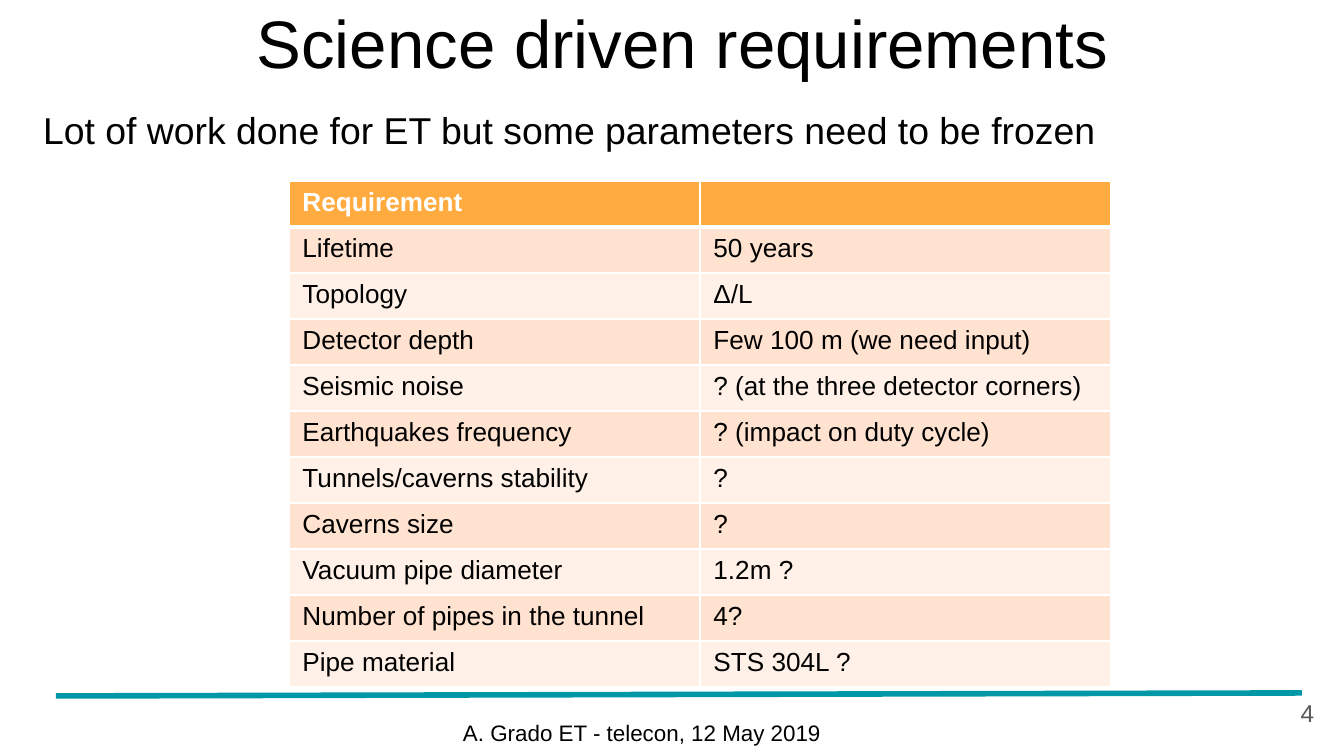
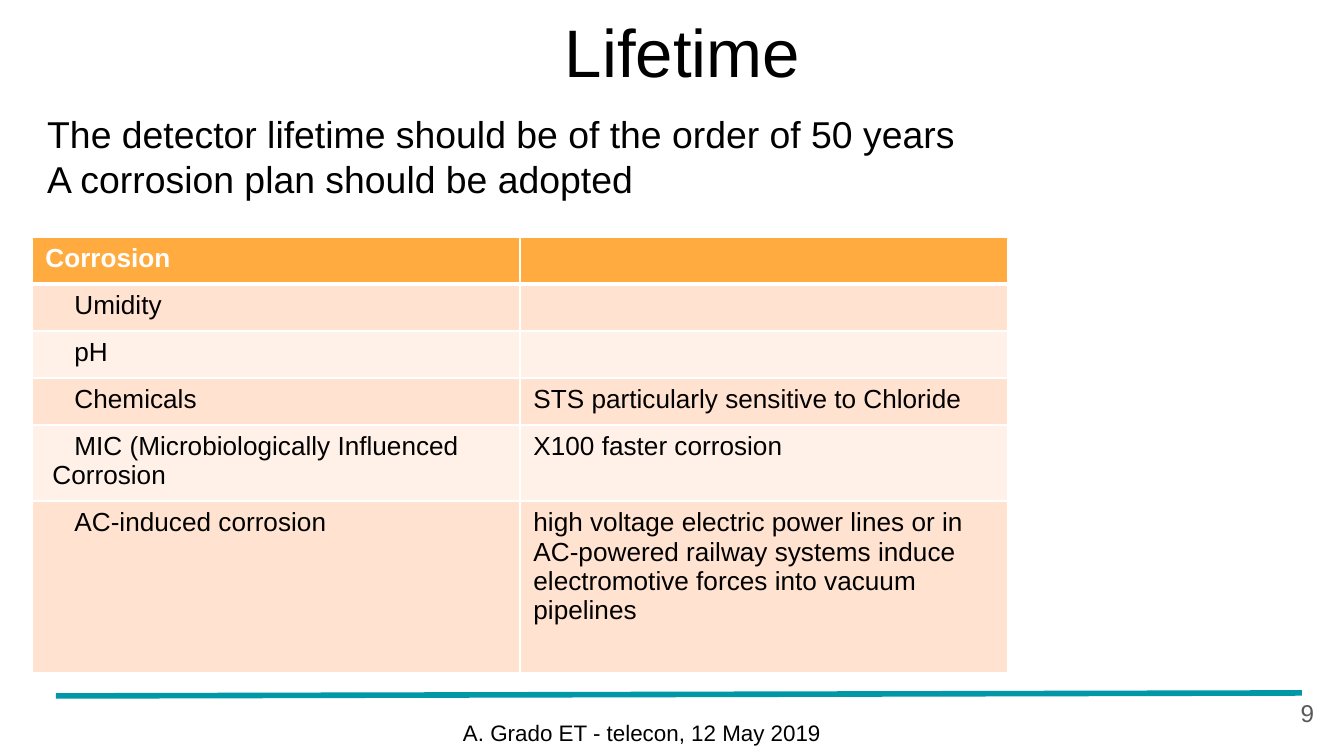
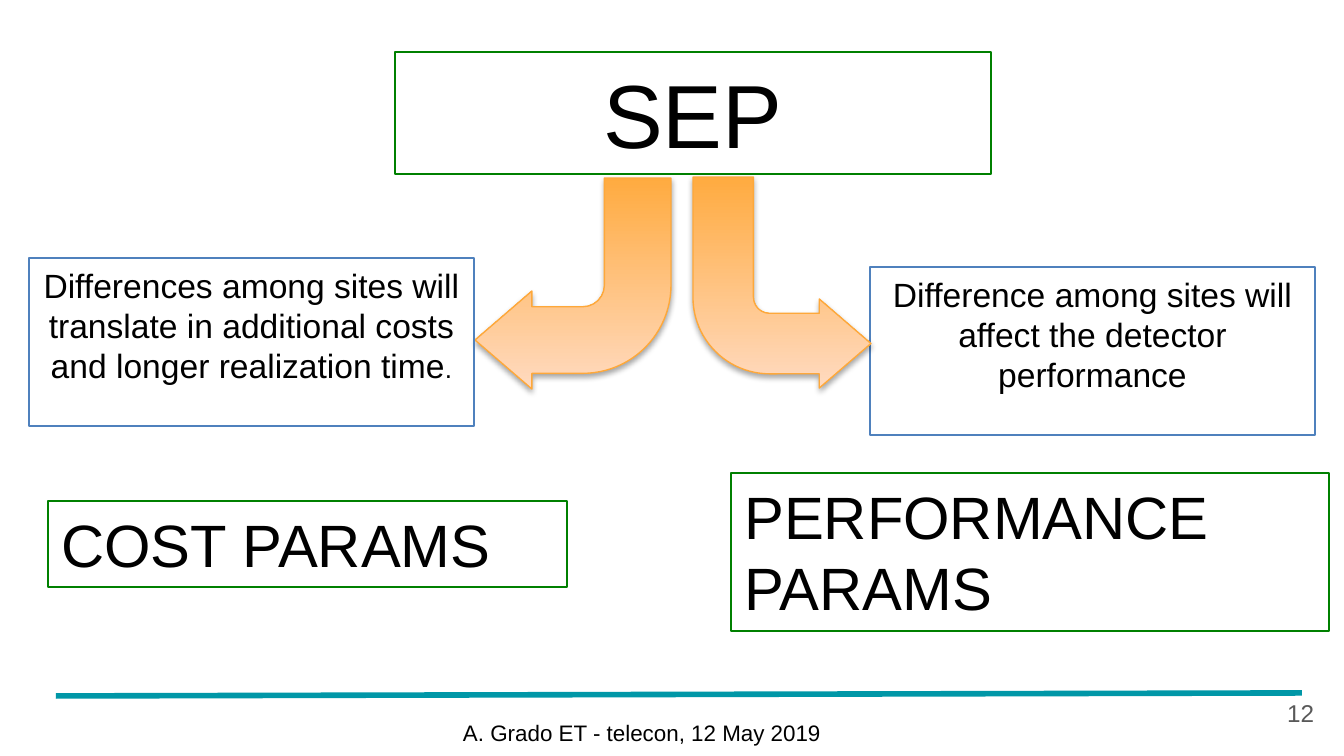
from dataclasses import dataclass

from lxml.etree import SubElement
from pptx import Presentation
from pptx.dml.color import RGBColor as Rgb
from pptx.enum.shapes import MSO_CONNECTOR as Conn, MSO_SHAPE as Kind
from pptx.enum.text import MSO_ANCHOR as Anchor, PP_ALIGN as Align
from pptx.oxml.ns import qn
from pptx.util import Emu, Pt


@dataclass(frozen=True)
class Theme:
    """Colours, font and type sizes shared by the slides."""
    font: str = "Arial"
    ink: str = "000000"
    paper: str = "FFFFFF"
    grey: str = "595959"
    teal: str = "0097A7"
    amber: str = "FFAB40"
    rim: str = "FEA83A"
    peach: str = "FFDAC0"
    odd: str = "FFE2CF"
    even: str = "FFF1E8"
    green: str = "008000"
    blue: str = "4F81BD"
    hero: int = 48
    title: int = 36
    label: int = 32
    lead: int = 20
    note: int = 18
    cell: int = 14
    page: int = 13
    foot: int = 12


T = Theme()


def px(n):
    """Turn pixels into EMU."""
    return Emu(round(n * 914400 / 134.4))


def rgb(code):
    """Turn a hex code into a colour."""
    return Rgb.from_string(code)


def style(para, size, color=T.ink, align=None, bold=False):
    """Set the font and alignment of a paragraph."""
    font = para.font
    font.name, font.size, font.bold = T.font, Pt(size), bold
    font.color.rgb = rgb(color)
    if align is not None:
        para.alignment = align


def write(shape, text, size, color=T.ink, align=None, inset=None, anchor=Anchor.TOP):
    """Fill a shape with one paragraph for each line of text."""
    frame = shape.text_frame
    frame.word_wrap, frame.vertical_anchor = True, anchor
    if inset is not None:
        frame.margin_left = frame.margin_right = px(inset)
        frame.margin_top = frame.margin_bottom = px(inset)
    frame.text = text
    for para in frame.paragraphs:
        style(para, size, color, align)


def label(slide, box, text, size, **look):
    """Add a text box."""
    write(slide.shapes.add_textbox(*map(px, box)), text, size, **look)


def frame(slide, box, text, size, edge, align=Align.LEFT):
    """Add an outlined box with text."""
    shape = slide.shapes.add_shape(Kind.RECTANGLE, *map(px, box))
    shape.shadow.inherit = False
    shape.fill.background()
    shape.line.color.rgb, shape.line.width = rgb(edge), Pt(0.75)
    write(shape, text, size, align=align)
    return shape


def footer(slide, page):
    """Add the rule, the event line and the page number."""
    rule = slide.shapes.add_connector(Conn.STRAIGHT, px(56), px(696), px(1302), px(693))
    rule.line.color.rgb, rule.line.width = rgb(T.teal), Pt(3)
    SubElement(rule._element.spPr, qn("a:effectLst"))
    label(slide, (450, 706, 388, 27), "A. Grado ET - telecon, 12 May 2019", T.foot, inset=13)
    label(slide, (1246, 685, 81, 58), str(page), T.page, color=T.grey,
          align=Align.RIGHT, inset=13)


def heading(slide, top, text):
    """Add the slide title."""
    label(slide, (56, top, 1253, 124), text, T.title, align=Align.CENTER,
          inset=13, anchor=Anchor.MIDDLE)


def border(cell, row):
    """Draw white cell borders, thick under the header row."""
    props = cell._tc.get_or_add_tcPr()
    wide = {"lnT": row == 1, "lnB": row == 0}
    for side in ("lnL", "lnR", "lnT", "lnB"):
        line = SubElement(props, qn(f"a:{side}"), w=str(Pt(3 if wide.get(side) else 1)))
        SubElement(SubElement(line, qn("a:solidFill")), qn("a:srgbClr"), val=T.paper)


def grid(slide, left, top, width, highs, rows, indent=False):
    """Add a two-column table with a header and banded rows."""
    shape = slide.shapes.add_table(len(rows), 2, px(left), px(top), px(2 * width), px(sum(highs)))
    table = shape.table
    table.horz_banding = False
    for col in table.columns:
        col.width = px(width)
    for r, (high, texts) in enumerate(zip(highs, rows)):
        table.rows[r].height = px(high)
        fill = T.amber if r == 0 else T.odd if r % 2 else T.even
        for c, text in enumerate(texts):
            cell = table.cell(r, c)
            border(cell, r)
            cell.fill.solid()
            cell.fill.fore_color.rgb = rgb(fill)
            cell.text = text
            para = cell.text_frame.paragraphs[0]
            style(para, T.cell, T.ink if r else T.paper, bold=r == 0)
            if not text:
                SubElement(para._p, qn("a:endParaRPr"), sz=str(T.cell * 100))
            if indent and r and c == 0:
                props = para._p.get_or_add_pPr()
                props.set("marL", str(px(7)))
                props.set("indent", str(px(22)))


def arrow(slide, box, bend, flip=False):
    """Add a bent arrow that falls and turns to one side."""
    shape = slide.shapes.add_shape(Kind.BENT_ARROW, *map(px, box))
    shape.rotation = 180
    if flip:
        shape._element.spPr.xfrm.set("flipH", "1")
    for i, value in enumerate((0.34, 0.25, 0.29, bend)):
        shape.adjustments[i] = value
    shape.fill.gradient()
    shape.fill.gradient_angle = 90
    for stop, code in zip(shape.fill.gradient_stops, (T.amber, T.peach)):
        stop.color.rgb = rgb(code)
    shape.line.color.rgb, shape.line.width = rgb(T.rim), Pt(0.75)
    effects = SubElement(shape._element.spPr, qn("a:effectLst"))
    shade = SubElement(effects, qn("a:outerShdw"), blurRad=str(Pt(3.1)), dist=str(Pt(1.8)),
                       dir="5400000", rotWithShape="0")
    tint = SubElement(shade, qn("a:srgbClr"), val=T.ink)
    SubElement(tint, qn("a:alpha"), val="35000")


def needs(slide):
    """Build the requirements slide."""
    heading(slide, -20, "Science driven requirements")
    rows = [
        ("Requirement", ""),
        ("Lifetime", "50 years"),
        ("Topology", "Δ/L"),
        ("Detector depth", "Few 100 m (we need input)"),
        ("Seismic noise", "? (at the three detector corners)"),
        ("Earthquakes frequency", "? (impact on duty cycle)"),
        ("Tunnels/caverns stability", "?"),
        ("Caverns size", "?"),
        ("Vacuum pipe diameter", "1.2m ?"),
        ("Number of pipes in the tunnel", "4?"),
        ("Pipe material", "STS 304L ?"),
    ]
    grid(slide, 289, 181, 411, [46] * len(rows), rows)
    label(slide, (30, 101, 1228, 59),
          "Lot of work done for ET but some parameters need to be frozen", T.lead)


def life(slide):
    """Build the lifetime slide."""
    heading(slide, -11, "Lifetime")
    rows = [
        ("Corrosion", ""),
        ("Umidity", ""),
        ("pH", ""),
        ("Chemicals", "STS particularly sensitive to Chloride"),
        ("MIC (Microbiologically Influenced Corrosion", "X100 faster corrosion"),
        ("AC-induced corrosion",
         "high voltage electric power lines or in AC-powered railway systems "
         "induce electromotive forces into vacuum pipelines"),
    ]
    grid(slide, 32, 237, 488, [47] * 4 + [72, 172], rows, indent=True)
    label(slide, (34, 105, 1293, 103),
          "The detector lifetime should be of the order of 50 years\n"
          "A corrosion plan should be adopted", T.lead)


def split(slide):
    """Build the slide that parts cost from performance."""
    frame(slide, (395, 52, 596, 122), "SEP", T.hero, T.green, Align.CENTER)
    arrow(slide, (475, 178, 196, 211), 0.45)
    cost = frame(slide, (29, 258, 445, 168),
                 "Differences among sites will translate in additional costs "
                 "and longer realization time", T.note, T.blue, Align.CENTER)
    dot = cost.text_frame.paragraphs[0].add_run()
    dot.text, dot.font.size = ".", Pt(T.cell)
    frame(slide, (870, 267, 445, 168),
          "Difference among sites will affect the detector performance",
          T.note, T.blue, Align.CENTER)
    arrow(slide, (693, 177, 178, 211), 0.43, flip=True)
    frame(slide, (48, 501, 519, 86), "COST PARAMS", T.label, T.green)
    frame(slide, (731, 473, 598, 158), "PERFORMANCE PARAMS", T.label, T.green)


def main():
    """Build and save the deck."""
    deck = Presentation()
    deck.slide_width, deck.slide_height = px(1344), px(756)
    for page, build in ((4, needs), (9, life), (12, split)):
        slide = deck.slides.add_slide(deck.slide_layouts[6])
        footer(slide, page)
        build(slide)
    deck.save("out.pptx")


if __name__ == "__main__":
    main()
